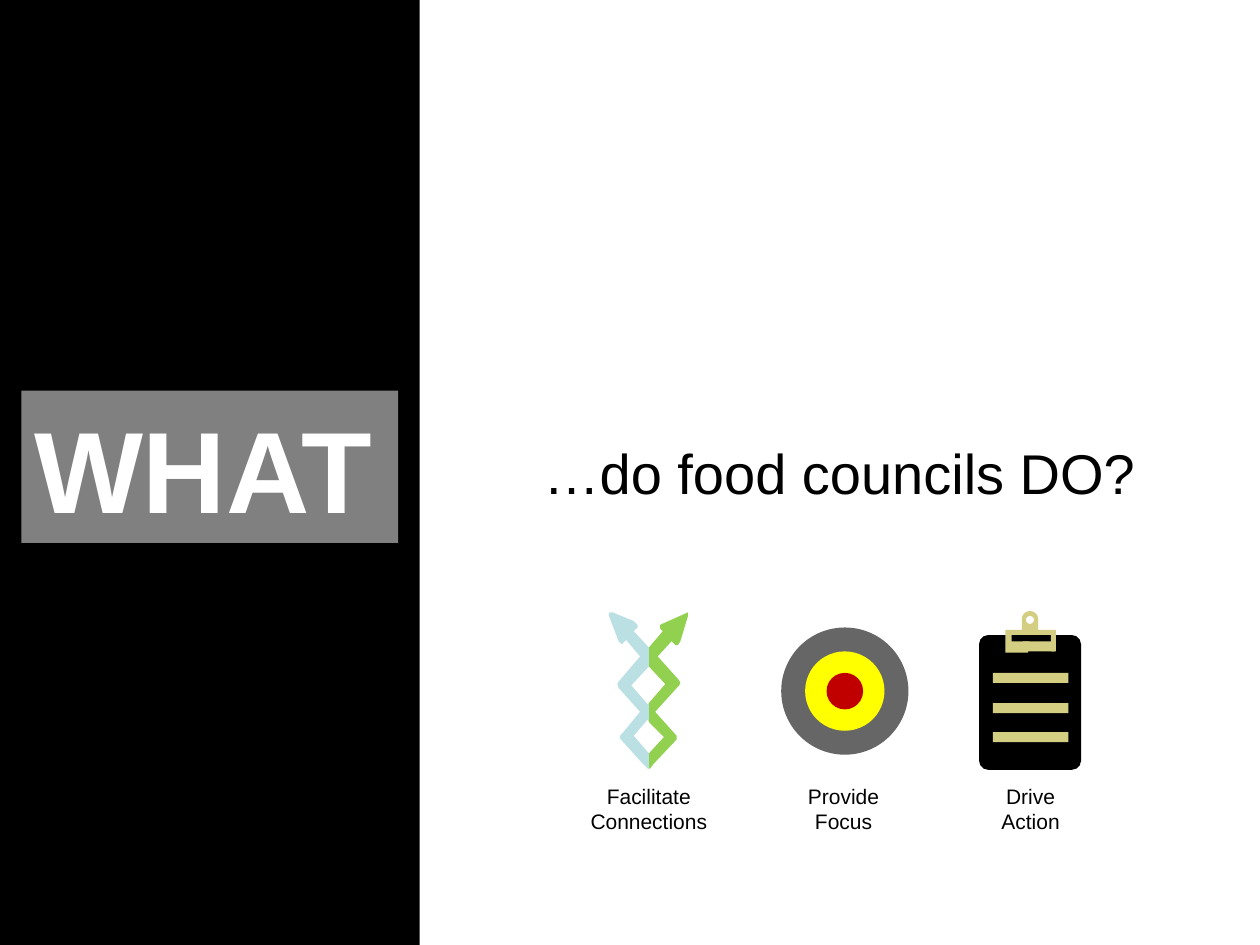
from math import cos, radians, sin

from pptx import Presentation
from pptx.dml.color import RGBColor
from pptx.enum.shapes import MSO_SHAPE as Shape
from pptx.enum.text import MSO_ANCHOR as Anchor, MSO_AUTO_SIZE as AutoSize, PP_ALIGN as Align
from pptx.util import Emu, Pt

PX = 9144  # EMU per px, 100 px to the inch
COLORS = {
    "black": "000000", "white": "FFFFFF", "gray": "808080", "green": "92D050",
    "blue": "BBE0E3", "ring": "666666", "yellow": "FFFF00", "red": "C00000",
    "khaki": "D3CE82",
}

GREEN_ARROW = [
    (528, 543), (515, 558), (515, 573), (527, 585), (515, 598), (515, 610),
    (516, 610), (519, 606), (537, 587), (537, 584), (520, 565), (539, 544),
    (540, 542), (539, 540), (522, 521), (533, 509), (536, 512), (538, 512),
    (540, 509), (546, 489), (546, 486), (544, 487), (526, 495), (524, 496),
    (524, 499), (526, 501), (515, 514), (515, 529)]
BLUE_ARROW = [
    (503, 501), (506, 498), (506, 496), (505, 495), (503, 493), (486, 486),
    (484, 486), (483, 488), (491, 509), (493, 511), (494, 511), (497, 508),
    (508, 521), (491, 541), (490, 543), (491, 546), (508, 565), (494, 582),
    (492, 584), (492, 586), (510, 606), (514, 610), (515, 610), (515, 598),
    (503, 584), (514, 571), (515, 573), (515, 558), (514, 559), (501, 544),
    (515, 529), (515, 514)]


def arc(center_x, center_y, radius, start, end, step):
    return [(center_x + radius * cos(radians(angle)), center_y + radius * sin(radians(angle)))
            for angle in range(start, end, step)]


class Page:
    def __init__(self, presentation, background, font="Arial"):
        self.slide = presentation.slides.add_slide(presentation.slide_layouts[5])
        self.font = font
        self.shapes = self.slide.shapes
        self.paint(self.slide.background.fill, background)

    def paint(self, fill, color):
        fill.solid()
        fill.fore_color.rgb = RGBColor.from_string(COLORS[color])

    def start_group(self):
        self.shapes = self.slide.shapes.add_group_shape().shapes

    def finish(self, shape, color):
        shape.shadow.inherit = False
        self.paint(shape.fill, color)
        shape.line.fill.background()
        return shape

    def shape(self, kind, box, color):
        return self.finish(self.shapes.add_shape(kind, *(Emu(v * PX) for v in box)), color)

    def outline(self, color, *contours):
        first, *others = [[(x * PX, y * PX) for x, y in points] for points in contours]
        builder = self.shapes.build_freeform(*first[0], scale=1.0)
        builder.add_line_segments(first[1:], close=True)
        for points in others:
            builder.move_to(*points[0])
            builder.add_line_segments(points[1:], close=True)
        return self.finish(builder.convert_to_shape(), color)

    def set_text(self, shape, lines, size, color, align, anchor, bold=False, wrap=True):
        frame = shape.text_frame
        frame.auto_size = AutoSize.NONE
        frame.word_wrap = wrap
        frame.vertical_anchor = anchor
        paragraph = frame.paragraphs[0]
        paragraph.alignment = align
        for index, line in enumerate(lines):
            if index:
                paragraph.add_line_break()
            run = paragraph.add_run()
            run.text = line
            run.font.name, run.font.size, run.font.bold = self.font, Pt(size), bold
            run.font.color.rgb = RGBColor.from_string(COLORS[color])

    def title(self, text, box, size, color, fill):
        title = self.slide.shapes.title
        title.left, title.top, title.width, title.height = (Emu(v * PX) for v in box)
        self.paint(title.fill, fill)
        self.set_text(title, [text], size, color, Align.LEFT, Anchor.BOTTOM, bold=True)

    def label(self, lines, box):
        text_box = self.shapes.add_textbox(*(Emu(v * PX) for v in box))
        self.set_text(text_box, lines, 12, "black", Align.CENTER, Anchor.TOP, wrap=False)


def main():
    presentation = Presentation()
    presentation.slide_width, presentation.slide_height = Emu(1000 * PX), Emu(750 * PX)
    page = Page(presentation, "black")

    # Title and question panel
    page.title("WHAT", (17, 310, 299, 121), 66, "white", "gray")
    panel = page.shape(Shape.RECTANGLE, (333, 0, 667, 750), "white")
    page.set_text(panel, ["…do food councils DO?"], 32, "black", Align.CENTER, Anchor.MIDDLE)

    # Crossing arrows
    page.start_group()
    page.outline("green", GREEN_ARROW)
    page.outline("blue", BLUE_ARROW)
    page.label(["Facilitate", "Connections"], (430, 617, 170, 50))

    # Target
    page.start_group()
    for diameter, color in ((101, "ring"), (63, "yellow"), (29, "red")):
        page.shape(Shape.OVAL, (670 - diameter // 2, 548 - diameter // 2, diameter, diameter), color)
    page.label(["Provide", "Focus"], (612, 617, 115, 50))

    # Clipboard
    page.start_group()
    board = page.shape(Shape.ROUNDED_RECTANGLE, (777, 504, 81, 107), "black")
    board.adjustments[0] = 0.09
    clip = [(803, 509), (803, 504), (838, 504), (838, 500), (824, 500),
            *arc(817.5, 491.5, 6.5, 0, -181, -15),
            (811, 500), (798, 500), (798, 518), (816, 518), (817, 509)]
    page.outline("khaki", clip, arc(817.5, 492, 3.2, 0, 360, 20))
    page.shape(Shape.RECTANGLE, (812, 509, 25, 8), "khaki")
    page.shape(Shape.RECTANGLE, (834, 502, 4, 15), "khaki")
    for top in (534, 558, 581):
        page.shape(Shape.RECTANGLE, (788, top, 60, 8), "khaki")
    page.label(["Drive", "Action"], (766, 617, 104, 50))

    presentation.save("out.pptx")


if __name__ == "__main__":
    main()
